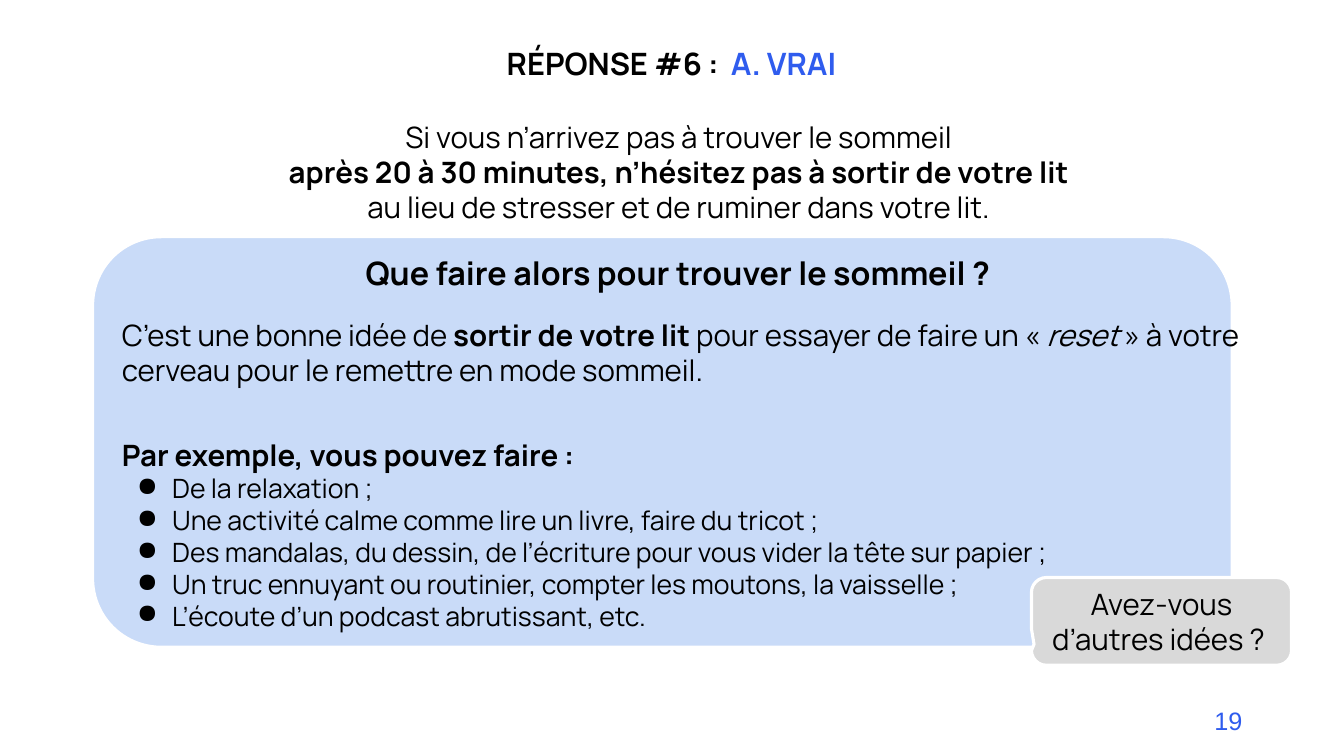
import pptx
import pptx.util
import pptx.dml.color
import pptx.enum.shapes
import pptx.enum.text
import pptx.oxml.ns
import lxml.etree

Inches = pptx.util.Inches
Pt = pptx.util.Pt
Align = pptx.enum.text.PP_ALIGN
Anchor = pptx.enum.text.MSO_ANCHOR
Fit = pptx.enum.text.MSO_AUTO_SIZE
Kind = pptx.enum.shapes.MSO_SHAPE

BLACK, BLUE, PALE, GREY, WHITE = "000000", "2F5CEE", "C9DBF8", "D9D9D9", "FFFFFF"
BOLD = {"bold": True}


def paint(text):
    return pptx.dml.color.RGBColor.from_string(text)


def apply(item, values):
    for name, value in values.items():
        setattr(item, name, value)


class Board:
    def __init__(self, slide, face, color):
        self.slide = slide
        self.face = face
        self.color = color

    def panel(self, kind, place, fill, width, adjust=()):
        shape = self.slide.shapes.add_shape(kind, *map(Inches, place))
        shape.shadow.inherit = False
        shape.fill.solid()
        shape.fill.fore_color.rgb = paint(fill)
        shape.line.color.rgb = paint(WHITE)
        shape.line.width = Pt(width)
        for index, value in enumerate(adjust):
            shape.adjustments[index] = value
        return shape

    def box(self, place):
        return self.slide.shapes.add_textbox(*map(Inches, place))

    def frame(self, shape, pad=0.1, **values):
        frame = shape.text_frame
        side = Inches(0.1)
        apply(frame, {"word_wrap": True, "margin_left": side, "margin_right": side,
                      "margin_top": Inches(pad), "margin_bottom": Inches(pad), **values})
        return frame

    def say(self, frame, size, parts, align=Align.CENTER, before=0, bullet=False):
        para = frame.paragraphs[0]
        if para.runs:
            para = frame.add_paragraph()
        apply(para, {"alignment": align, "space_before": Pt(before)})
        if bullet:
            self.bullet(para)
        for text, style in parts:
            run = para.add_run()
            run.text = text
            style = {"color": self.color, **style}
            run.font.color.rgb = paint(style.pop("color"))
            apply(run.font, {"name": self.face, "size": Pt(size), **style})

    def bullet(self, para):
        props = para._p.get_or_add_pPr()
        props.set("marL", str(Inches(0.5)))
        props.set("indent", str(Inches(-0.35)))
        full = pptx.oxml.ns.qn
        tint = lxml.etree.SubElement(props, full("a:buClr"))
        lxml.etree.SubElement(tint, full("a:srgbClr")).set("val", self.color)
        lxml.etree.SubElement(props, full("a:buChar")).set("char", "●")


def main():
    deck = pptx.Presentation()
    apply(deck, {"slide_width": Inches(13.33), "slide_height": Inches(7.5)})
    board = Board(deck.slides.add_slide(deck.slide_layouts[6]), "Manrope", BLACK)

    board.panel(Kind.ROUNDED_RECTANGLE, (0.92, 2.35, 11.3, 4.07), PALE, 2)

    number = board.frame(board.box((9.42, 6.95, 3, 0.4)), 0.05)
    board.say(number, 18, [("19", {"name": "Arial", "color": BLUE})], Align.RIGHT)

    title = board.frame(board.box((0.77, 0.34, 11.78, 0.57)), auto_size=Fit.SHAPE_TO_FIT_TEXT)
    board.say(title, 22, [("RÉPONSE #6 :", BOLD),
                          ("  A. VRAI", {"color": BLUE, **BOLD})])

    body = board.frame(board.box((1.11, 1.08, 11.3, 5.33)), auto_size=Fit.SHAPE_TO_FIT_TEXT)
    for text, style in (
        ("Si vous n’arrivez pas à trouver le sommeil ", {}),
        ("après 20 à 30 minutes, n’hésitez pas à sortir de votre lit ", BOLD),
        ("au lieu de stresser et de ruminer dans votre lit. ", {}),
    ):
        board.say(body, 21, [(text, style)])
    board.say(body, 23, [("Que faire alors pour trouver le sommeil ? ", BOLD)], before=20.5)
    board.say(body, 21, [
        ("C’est une bonne idée de ", {}),
        ("sortir de votre lit ", BOLD),
        ("pour essayer de faire un « ", {}),
        ("reset", {"italic": True}),
        (" » à votre cerveau pour le remettre en mode sommeil.", {}),
    ], Align.LEFT, 18)
    board.say(body, 21, [("Par exemple, vous pouvez faire :", BOLD)], Align.LEFT, 35)
    for idea in (
        "De la relaxation ;",
        "Une activité calme comme lire un livre, faire du tricot ;",
        "Des mandalas, du dessin, de l’écriture pour vous vider la tête sur papier ;",
        "Un truc ennuyant ou routinier, compter les moutons, la vaisselle ;",
        "L’écoute d’un podcast abrutissant, etc.",
    ):
        board.say(body, 19, [(idea, {})], Align.LEFT, bullet=True)

    call = board.panel(Kind.ROUNDED_RECTANGULAR_CALLOUT, (10.23, 5.73, 2.58, 0.87),
                       GREY, 2.25, (-0.49, 0.26, 0.17))
    ask = board.frame(call, vertical_anchor=Anchor.MIDDLE)
    board.say(ask, 21, [("Avez-vous d’autres idées ? ", {})])

    deck.save("out.pptx")


if __name__ == "__main__":
    main()
